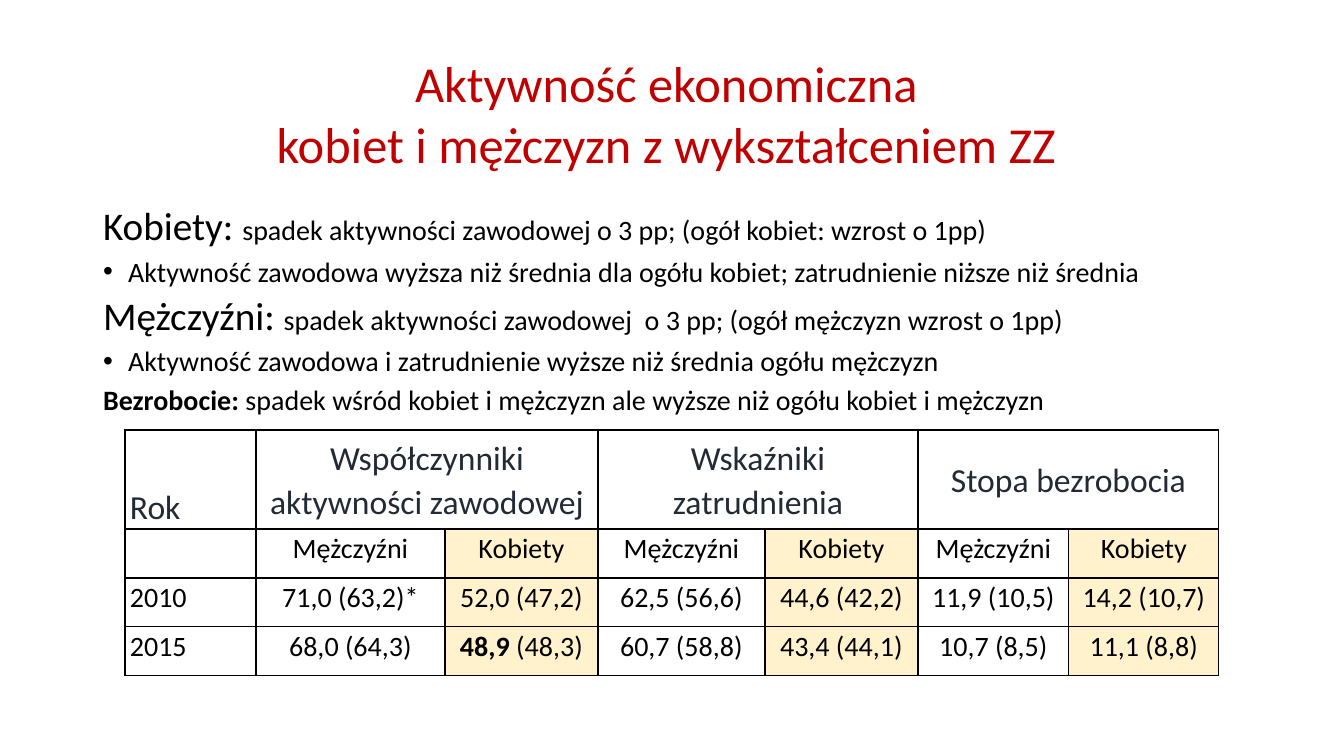
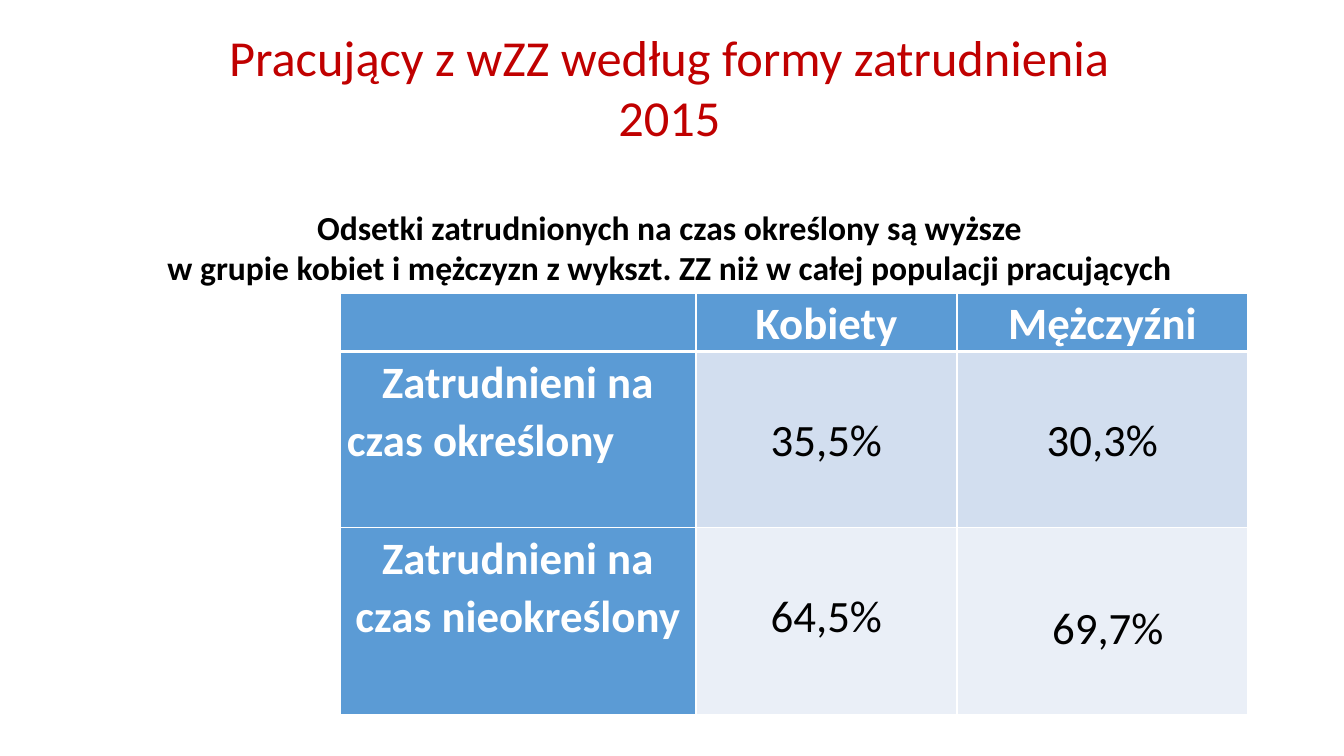
from copy import deepcopy

from lxml.etree import SubElement
from pptx import Presentation
from pptx.dml.color import RGBColor
from pptx.enum.text import MSO_ANCHOR, MSO_AUTO_SIZE, PP_ALIGN
from pptx.oxml import parse_xml
from pptx.oxml.ns import nsdecls, qn
from pptx.util import Pt

EMU_PER_PX = 914400 / 100.8
COLORS = {
    "title": "C00000",
    "text": "000000",
    "heading": "222A35",
    "white": "FFFFFF",
    "women": "FFF2CC",
    "blue": "5B9BD5",
    "band_dark": "D2DEEF",
    "band_light": "EAEFF7",
}
FONT = "Calibri"
CENTER, LEFT = PP_ALIGN.CENTER, PP_ALIGN.LEFT
TOP, MIDDLE, BOTTOM = MSO_ANCHOR.TOP, MSO_ANCHOR.MIDDLE, MSO_ANCHOR.BOTTOM


def px(length):
    return round(length * EMU_PER_PX)


def write(paragraph, text, size=20, color="text", bold=False, align=LEFT,
          line=1.0, before=0, bullet=None):
    """Fill a paragraph; text is a string or a list of (string, run format) pairs."""
    paragraph.alignment = align
    paragraph.line_spacing = line
    paragraph.space_before = Pt(before)
    paragraph.space_after = Pt(0)
    properties = paragraph._p.get_or_add_pPr()
    indent = px(25) if bullet else 0
    properties.set("marL", str(indent))
    properties.set("indent", str(-indent))
    if bullet:
        SubElement(properties, qn("a:buChar")).set("char", bullet)
    else:
        SubElement(properties, qn("a:buNone"))

    parts = [(text, {})] if isinstance(text, str) else text
    for part, changes in parts:
        run_format = {"size": size, "color": color, "bold": bold, **changes}
        for number, words in enumerate(part.split("\n")):
            if number:
                paragraph.add_line_break()
                paragraph._p[-1].append(deepcopy(run._r.rPr))
            run = paragraph.add_run()
            run.text = words
            run.font.name = FONT
            run.font.size = Pt(run_format["size"])
            run.font.bold = run_format["bold"]
            run.font.color.rgb = RGBColor.from_string(COLORS[run_format["color"]])


class Deck:
    def __init__(self):
        self.presentation = Presentation()
        self.presentation.slide_width = px(1344)
        self.presentation.slide_height = px(756)
        self.slide = None

    def add_slide(self):
        self.slide = self.presentation.slides.add_slide(self.presentation.slide_layouts[1])

    def fill_placeholder(self, index, box, paragraphs, anchor):
        """Move a placeholder to box and write its (text, format) paragraphs."""
        shape = self.slide.placeholders[index]
        shape.left, shape.top, shape.width, shape.height = map(px, box)
        frame = shape.text_frame
        frame.word_wrap = True
        frame.auto_size = MSO_AUTO_SIZE.NONE
        frame.vertical_anchor = anchor
        for number, (text, style) in enumerate(paragraphs):
            paragraph = frame.add_paragraph() if number else frame.paragraphs[0]
            write(paragraph, text, **style)

    def title(self, text, box):
        style = {"size": 36, "color": "title", "align": CENTER}
        self.fill_placeholder(0, box, [(text, style)], MIDDLE)

    def body(self, paragraphs, box):
        self.fill_placeholder(1, box, paragraphs, TOP)

    def table(self, left, top, columns, rows):
        shape = self.slide.shapes.add_table(
            len(rows), len(columns), px(left), px(top), px(sum(columns)), px(sum(rows)))
        table = shape.table
        table.horz_banding = False
        for column, width in zip(table.columns, columns):
            column.width = px(width)
        for row, height in zip(table.rows, rows):
            row.height = px(height)
        return table

    def cell(self, cell, paragraphs, fill, border, margins, anchor=MIDDLE,
             top_line=1, bottom_line=1, **style):
        """Write a cell; paragraphs is a list of (text, format changes) pairs."""
        cell.fill.solid()
        cell.fill.fore_color.rgb = RGBColor.from_string(COLORS[fill])
        cell.vertical_anchor = anchor
        (cell.margin_left, cell.margin_top,
         cell.margin_right, cell.margin_bottom) = map(px, margins)
        widths = {"lnL": 1, "lnR": 1, "lnT": top_line, "lnB": bottom_line}
        for position, (side, width) in enumerate(widths.items()):
            edge = parse_xml(
                f'<a:{side} {nsdecls("a")} w="{Pt(width)}"><a:solidFill>'
                f'<a:srgbClr val="{COLORS[border]}"/></a:solidFill></a:{side}>')
            cell._tc.get_or_add_tcPr().insert(position, edge)
        frame = cell.text_frame
        for number, (text, changes) in enumerate(paragraphs):
            paragraph = frame.add_paragraph() if number else frame.paragraphs[0]
            write(paragraph, text, **{**style, **changes})


def add_activity_slide(deck):
    deck.add_slide()
    deck.title("Aktywność ekonomiczna\nkobiet i mężczyzn z wykształceniem ZZ", (87, 40, 1159, 146))
    first = {"line": 0.9}
    plain = {"line": 0.9, "before": 6}
    bulleted = {**plain, "bullet": "•"}
    large = {"size": 28}
    deck.body([
        ([("Kobiety: ", large),
          ("spadek aktywności zawodowej o 3 pp; (ogół kobiet: wzrost o 1pp)", {})], first),
        ("Aktywność zawodowa wyższa niż średnia dla ogółu kobiet; "
         "zatrudnienie niższe niż średnia", bulleted),
        ([("Mężczyźni: ", large),
          ("spadek aktywności zawodowej  o 3 pp; (ogół mężczyzn wzrost o 1pp)", {})], plain),
        ("Aktywność zawodowa i zatrudnienie wyższe niż średnia ogółu mężczyzn", bulleted),
        ([("Bezrobocie: ", {"bold": True}),
          ("spadek wśród kobiet i mężczyzn ale wyższe niż ogółu kobiet i mężczyzn", {})], plain),
    ], (93, 202, 1159, 223))

    table = deck.table(125, 430, [131, 189, 153, 167, 153, 151, 150], [99, 49, 49, 49])
    frame = {"border": "text", "margins": (5, 0, 5, 0)}
    heading = {**frame, "fill": "white", "size": 24, "color": "heading", "line": 1.07}
    deck.cell(table.cell(0, 0), [("Rok", {})], anchor=BOTTOM, **heading)
    groups = ["Współczynniki aktywności zawodowej", "Wskaźniki zatrudnienia", "Stopa bezrobocia"]
    for number, group in enumerate(groups):
        start, end = (table.cell(0, 2 * number + offset) for offset in (1, 2))
        start.merge(end)
        deck.cell(start, [(group, {})], align=CENTER, **heading)
        deck.cell(end, [], **heading)

    rows = [
        ["", *["Mężczyźni", "Kobiety"] * len(groups)],
        ["2010", "71,0 (63,2)*", "52,0 (47,2)", "62,5 (56,6)", "44,6 (42,2)",
         "11,9 (10,5)", "14,2 (10,7)"],
        ["2015", "68,0 (64,3)", [("48,9 ", {"bold": True}), ("(48,3)", {})], "60,7 (58,8)",
         "43,4 (44,1)", "10,7 (8,5)", "11,1 (8,8)"],
    ]
    for row, values in enumerate(rows, start=1):
        for column, value in enumerate(values):
            is_women = column > 0 and column % 2 == 0
            deck.cell(table.cell(row, column), [(value, {})] if value else [],
                      fill="women" if is_women else "white",
                      align=CENTER if column else LEFT, line=Pt(18), **frame)


def add_employment_slide(deck):
    deck.add_slide()
    deck.title("Pracujący z wZZ według formy zatrudnienia\n2015", (90, 13, 1159, 147))
    deck.body([
        ("Odsetki zatrudnionych na czas określony są wyższe\n"
         "w grupie kobiet i mężczyzn z wykszt. ZZ niż w całej populacji pracujących",
         {"size": 24, "bold": True, "align": CENTER}),
    ], (90, 202, 1159, 91))

    table = deck.table(340, 293, [356, 261, 291], [58, 176, 187])
    style = {"border": "white", "anchor": TOP, "size": 32, "line": 1.07, "align": CENTER}
    heading = {**style, "fill": "blue", "color": "white", "bold": True, "margins": (7, 0, 7, 0)}
    for column, label in enumerate(["", "Kobiety", "Mężczyźni"]):
        deck.cell(table.cell(0, column), [(label, {})] if label else [],
                  bottom_line=3, **heading)

    value_margins = (7, 58, 7, 0)
    rows = [
        ([("Zatrudnieni na", {}), ("czas określony", {"align": LEFT})], "band_dark", 3,
         [("35,5%", value_margins), ("30,3%", value_margins)]),
        ([("Zatrudnieni na czas nieokreślony", {})], "band_light", 1,
         [("64,5%", value_margins), ("69,7%", (18, 70, 7, 0))]),
    ]
    for row, (label, fill, top_line, values) in enumerate(rows, start=1):
        deck.cell(table.cell(row, 0), label, top_line=top_line, **heading)
        for column, (value, margins) in enumerate(values, start=1):
            deck.cell(table.cell(row, column), [(value, {})], fill=fill,
                      margins=margins, top_line=top_line, **style)


def main():
    deck = Deck()
    add_activity_slide(deck)
    add_employment_slide(deck)
    deck.presentation.save("out.pptx")


if __name__ == "__main__":
    main()
